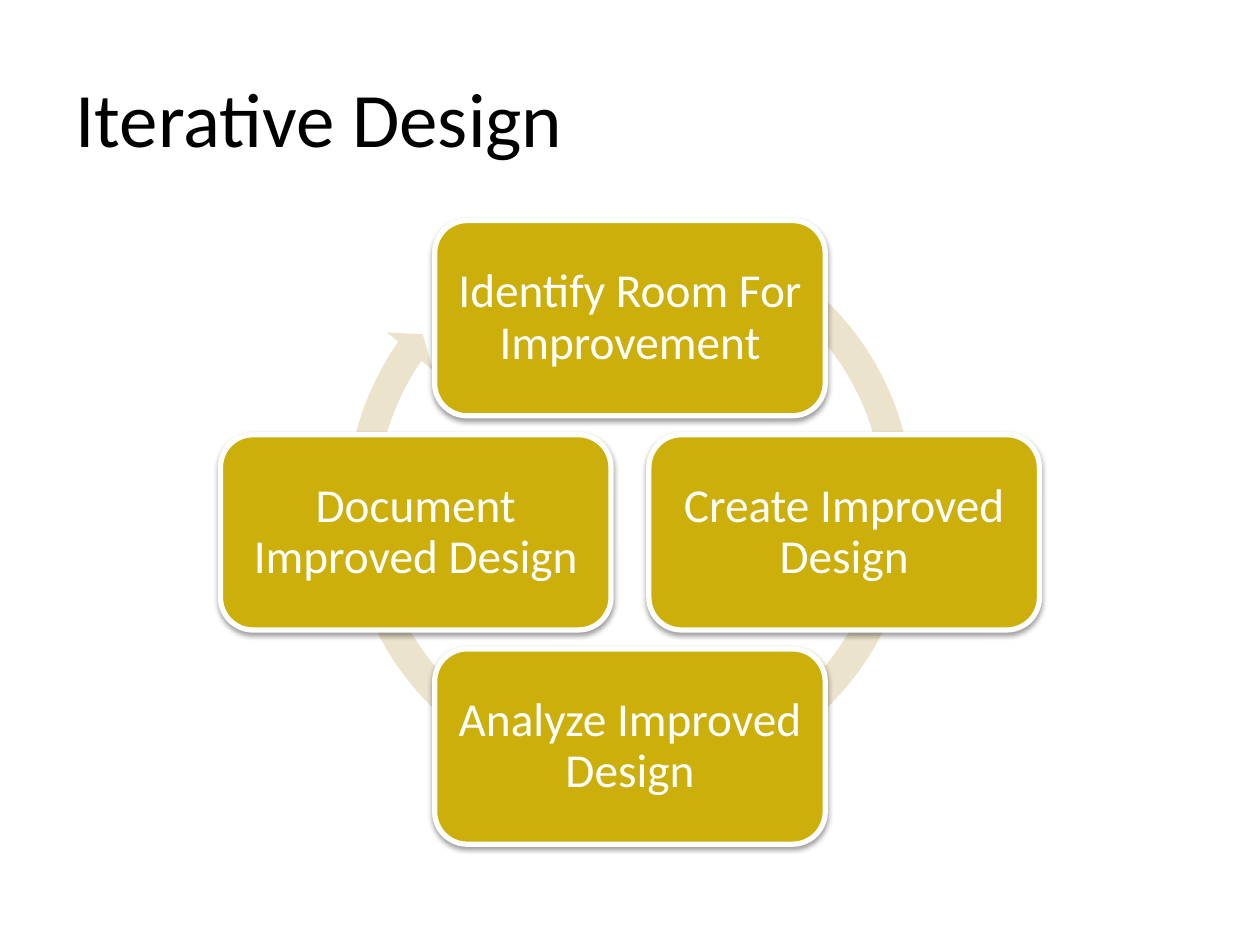
from dataclasses import dataclass

from lxml.etree import SubElement
from pptx import Presentation
from pptx.dml.color import RGBColor
from pptx.enum.shapes import MSO_SHAPE
from pptx.enum.text import MSO_ANCHOR, PP_ALIGN
from pptx.oxml.ns import qn
from pptx.util import Inches, Pt


@dataclass(frozen=True)
class Theme:
    font: str = "Calibri"
    title_size: float = 44
    step_size: float = 27
    ink: str = "000000"
    paper: str = "FFFFFF"
    gold: str = "CCAF0A"
    sand: str = "ECE3CC"
    outline: float = 3
    inset: float = 0.11


class CycleSlide:
    """Draws on a grid of 200 columns by 150 rows."""

    def __init__(self, deck, theme):
        self.theme = theme
        self.slide = deck.slides.add_slide(deck.slide_layouts[5])
        self.column = deck.slide_width / 200
        self.row = deck.slide_height / 150

    def frame(self, center, size):
        """Turn a centre and a size in grid units into left, top, width, height."""
        (x, y), (width, height) = center, size
        return (
            round((x - width / 2) * self.column),
            round((y - height / 2) * self.row),
            round(width * self.column),
            round(height * self.row),
        )

    def set_wording(self, text_frame, wording, size, color, align):
        text_frame.text = wording
        text_frame.word_wrap = True
        text_frame.vertical_anchor = MSO_ANCHOR.MIDDLE
        paragraph = text_frame.paragraphs[0]
        paragraph.alignment = align
        font = paragraph.runs[0].font
        font.name = self.theme.font
        font.size = Pt(size)
        font.color.rgb = RGBColor.from_string(color)
        return paragraph

    def title(self, wording, center, size):
        heading = self.slide.shapes.title
        heading.left, heading.top, heading.width, heading.height = self.frame(center, size)
        self.set_wording(heading.text_frame, wording, self.theme.title_size,
                         self.theme.ink, PP_ALIGN.LEFT)

    def filled(self, preset, center, size, color):
        shape = self.slide.shapes.add_shape(preset, *self.frame(center, size))
        shape.shadow.inherit = False
        shape.fill.solid()
        shape.fill.fore_color.rgb = RGBColor.from_string(color)
        shape.line.fill.background()
        return shape

    def cycle_arrow(self, center, size, adjustments):
        arrow = self.filled(MSO_SHAPE.CIRCULAR_ARROW, center, size, self.theme.sand)
        for index, value in enumerate(adjustments):
            arrow.adjustments[index] = value

    def step(self, wording, center, size):
        box = self.filled(MSO_SHAPE.ROUNDED_RECTANGLE, center, size, self.theme.gold)
        box.line.color.rgb = RGBColor.from_string(self.theme.paper)
        box.line.width = Pt(self.theme.outline)
        self.drop_shadow(box)
        label = box.text_frame
        label.margin_left = label.margin_right = Inches(self.theme.inset)
        label.margin_top = label.margin_bottom = Inches(self.theme.inset)
        paragraph = self.set_wording(label, wording, self.theme.step_size,
                                     self.theme.paper, PP_ALIGN.CENTER)
        paragraph.line_spacing = 0.9

    def drop_shadow(self, shape):
        effects = shape._element.spPr.find(qn("a:effectLst"))
        shadow = SubElement(effects, qn("a:outerShdw"), blurRad=str(Pt(3.1)),
                            dist=str(Pt(1.6)), dir="5400000", rotWithShape="0")
        color = SubElement(shadow, qn("a:srgbClr"), val=self.theme.ink)
        SubElement(color, qn("a:alpha"), val="38000")


def main():
    deck = Presentation()
    deck.slide_width, deck.slide_height = Inches(10), Inches(7.5)
    page = CycleSlide(deck, Theme())

    page.title("Iterative Design", center=(100, 18.5), size=(180, 25))
    page.cycle_arrow(center=(100, 80.1), size=(94.6, 94.6),
                     adjustments=(0.05, 2.73, 128.92, 179.9, 0.05))

    middle_x, middle_y, reach = 100, 84.5, 34
    steps = (
        ("Identify Room For Improvement", 0, -1),
        ("Create Improved Design", 1, 0),
        ("Analyze Improved Design", 0, 1),
        ("Document Improved Design", -1, 0),
    )
    for wording, across, down in steps:
        page.step(wording, size=(62, 31),
                  center=(middle_x + across * reach, middle_y + down * reach))

    deck.save("out.pptx")


if __name__ == "__main__":
    main()
